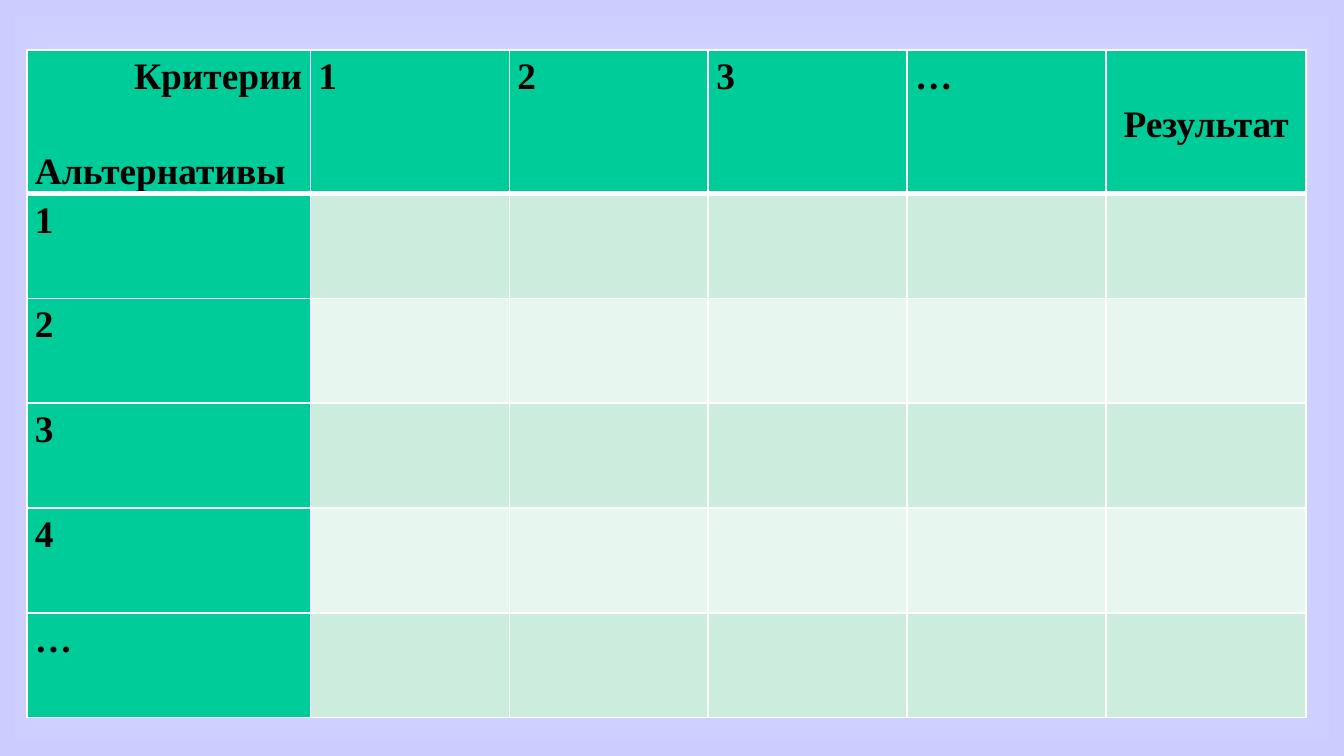
import pptx
import pptx.dml.color
import pptx.enum.text
import pptx.oxml
import pptx.oxml.ns
import pptx.util
from pptx.dml.color import RGBColor
from pptx.util import Inches

WHITE = RGBColor(0xFF, 0xFF, 0xFF)
BLACK = RGBColor(0x00, 0x00, 0x00)
LAVENDER = RGBColor(0xCC, 0xCC, 0xFF)
GREEN = RGBColor(0x00, 0xCC, 0x99)
BANDS = [RGBColor(0xCC, 0xEC, 0xDE), RGBColor(0xE7, 0xF6, 0xEF)]

LEFT = pptx.enum.text.PP_ALIGN.LEFT
RIGHT = pptx.enum.text.PP_ALIGN.RIGHT
CENTER = pptx.enum.text.PP_ALIGN.CENTER
NAMESPACE = pptx.oxml.ns.nsdecls("a")


def write(paragraph, text, align=LEFT, before=0):
    paragraph.alignment = align
    paragraph.line_spacing = 1.15
    paragraph.space_before = pptx.util.Pt(before)
    run = paragraph.add_run()
    run.text = text
    run.font.name = "Times New Roman"
    run.font.size = pptx.util.Pt(20)
    run.font.bold = True
    run.font.color.rgb = BLACK


def add_border(cell, side, points):
    """Draw one white cell edge; side is L, R, T or B."""
    cell._tc.get_or_add_tcPr().append(pptx.oxml.parse_xml(
        f'<a:ln{side} {NAMESPACE} w="{pptx.util.Pt(points)}">'
        f'<a:solidFill><a:srgbClr val="{WHITE}"/></a:solidFill></a:ln{side}>'))


# Widescreen, 16:9
deck = pptx.Presentation()
deck.slide_width = Inches(10)
deck.slide_height = Inches(10 * 9 / 16)
slide = deck.slides.add_slide(deck.slide_layouts[6])

# Background: white centre fading to lavender at the edges
background = slide.background.fill
background.gradient()
for stop, color in zip(background.gradient_stops, [WHITE, LAVENDER]):
    stop.color.rgb = color
gradient = slide.background._cSld.find(".//" + pptx.oxml.ns.qn("a:gradFill"))
gradient.replace(gradient.find(pptx.oxml.ns.qn("a:lin")), pptx.oxml.parse_xml(
    f'<a:path {NAMESPACE} path="shape">'
    '<a:fillToRect l="50000" t="50000" r="50000" b="50000"/></a:path>'))

# Decision matrix: alternatives down, criteria across
criteria = ["1", "2", "3", "…"]
alternatives = ["1", "2", "3", "4", "…"]
column_widths = [2.11] + [1.48] * 4 + [1.49]
row_heights = [1.07] + [0.78] * len(alternatives)

matrix = slide.shapes.add_table(
    len(row_heights), len(column_widths), Inches(0.2), Inches(0.37),
    Inches(sum(column_widths)), Inches(sum(row_heights))).table
matrix.first_row = False
matrix.horz_banding = False
for column, width in zip(matrix.columns, column_widths):
    column.width = Inches(width)
for row, height in zip(matrix.rows, row_heights):
    row.height = Inches(height)

for r in range(len(row_heights)):
    for c in range(len(column_widths)):
        cell = matrix.cell(r, c)
        cell.margin_left = cell.margin_right = Inches(0.06)
        cell.margin_top = cell.margin_bottom = 0
        add_border(cell, "L", 1)
        add_border(cell, "R", 1)
        add_border(cell, "T", 3 if r == 1 else 1)
        add_border(cell, "B", 3 if r == 0 else 1)
        cell.fill.solid()
        is_heading = r == 0 or c == 0
        cell.fill.fore_color.rgb = GREEN if is_heading else BANDS[(r - 1) % 2]

corner = matrix.cell(0, 0).text_frame
write(corner.paragraphs[0], "Критерии", align=RIGHT)
write(corner.add_paragraph(), "Альтернативы", before=25.4)

for c, criterion in enumerate(criteria, start=1):
    write(matrix.cell(0, c).text_frame.paragraphs[0], criterion)
for r, alternative in enumerate(alternatives, start=1):
    write(matrix.cell(r, 0).text_frame.paragraphs[0], alternative)

result = matrix.cell(0, len(column_widths) - 1)
result.vertical_anchor = pptx.enum.text.MSO_ANCHOR.MIDDLE
write(result.text_frame.paragraphs[0], "Результат", align=CENTER)

deck.save("out.pptx")
